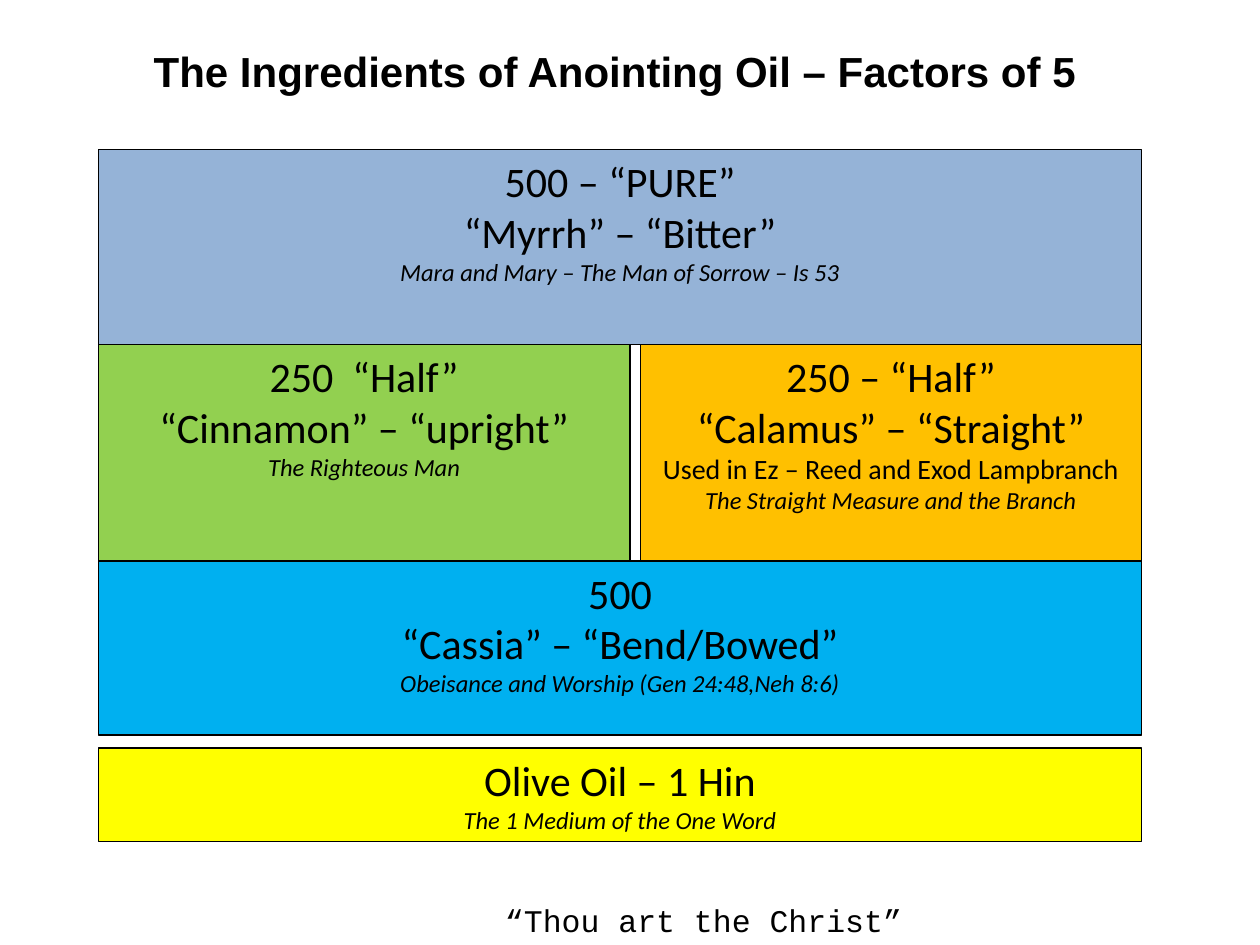
from dataclasses import dataclass

from pptx import Presentation
from pptx.dml.color import RGBColor
from pptx.enum.shapes import MSO_SHAPE
from pptx.enum.text import MSO_ANCHOR, PP_ALIGN
from pptx.slide import Slide
from pptx.text.text import TextFrame
from pptx.util import Pt

BLACK = RGBColor(0x00, 0x00, 0x00)
STEEL = RGBColor(0x95, 0xB3, 0xD7)
GREEN = RGBColor(0x92, 0xD0, 0x50)
ORANGE = RGBColor(0xFF, 0xC0, 0x00)
BLUE = RGBColor(0x00, 0xB0, 0xF0)
YELLOW = RGBColor(0xFF, 0xFF, 0x00)

LEFT, FULL_WIDTH = 56.2, 596.2
RIGHT = LEFT + FULL_WIDTH
CALAMUS_LEFT = 365.8


@dataclass(frozen=True)
class Line:
    text: str
    size: float = 24
    font: str = "Calibri"
    bold: bool = False
    italic: bool = False
    align: PP_ALIGN = PP_ALIGN.CENTER


@dataclass(frozen=True)
class Area:
    left: float
    top: float
    width: float
    height: float

    def lengths(self) -> tuple[Pt, Pt, Pt, Pt]:
        return Pt(self.left), Pt(self.top), Pt(self.width), Pt(self.height)


@dataclass(frozen=True)
class Ingredient:
    area: Area
    color: RGBColor
    lines: list[Line]


def meaning(text: str) -> Line:
    return Line(text, size=14, italic=True)


INGREDIENTS = [
    Ingredient(Area(LEFT, 85.5, FULL_WIDTH, 111.4), STEEL, [
        Line("500 – “PURE”"),
        Line("“Myrrh” – “Bitter”"),
        meaning("Mara and Mary – The Man of Sorrow – Is 53"),
    ]),
    Ingredient(Area(LEFT, 196.9, 303.8, 128), GREEN, [
        Line("250  “Half”"),
        Line("“Cinnamon” – “upright”"),
        meaning("The Righteous Man"),
    ]),
    Ingredient(Area(CALAMUS_LEFT, 196.9, RIGHT - CALAMUS_LEFT, 123.7), ORANGE, [
        Line("250 – “Half”"),
        Line("“Calamus” – “Straight”"),
        Line("Used in Ez – Reed and Exod Lampbranch", size=16),
        meaning("The Straight Measure and the Branch"),
    ]),
    Ingredient(Area(LEFT, 320.6, FULL_WIDTH, 99.4), BLUE, [
        Line("500"),
        Line("“Cassia” – “Bend/Bowed”"),
        meaning("Obeisance and Worship (Gen 24:48,Neh 8:6)"),
    ]),
    Ingredient(Area(LEFT, 427.5, FULL_WIDTH, 53.3), YELLOW, [
        Line("Olive Oil – 1 Hin"),
        meaning("The 1 Medium of the One Word"),
    ]),
]


def write_lines(frame: TextFrame, lines: list[Line], wrap: bool = True) -> None:
    frame.word_wrap = wrap
    frame.vertical_anchor = MSO_ANCHOR.TOP
    for index, line in enumerate(lines):
        para = frame.add_paragraph() if index else frame.paragraphs[0]
        para.text = line.text
        para.alignment = line.align
        para.font.name = line.font
        para.font.size = Pt(line.size)
        para.font.bold = line.bold
        para.font.italic = line.italic
        para.font.color.rgb = BLACK


def add_text(page: Slide, area: Area, line: Line, wrap: bool = True) -> None:
    box = page.shapes.add_textbox(*area.lengths())
    write_lines(box.text_frame, [line], wrap)


def add_ingredient(page: Slide, ingredient: Ingredient) -> None:
    box = page.shapes.add_shape(MSO_SHAPE.RECTANGLE, *ingredient.area.lengths())
    box.shadow.inherit = False
    box.fill.solid()
    box.fill.fore_color.rgb = ingredient.color
    box.line.color.rgb = BLACK
    box.line.width = Pt(0.75)
    write_lines(box.text_frame, ingredient.lines)


def main() -> None:
    deck = Presentation()
    deck.slide_width, deck.slide_height = Pt(720), Pt(540)
    page = deck.slides.add_slide(deck.slide_layouts[6])
    add_text(page, Area(281.5, 511.2, 360, 28.8),
             Line("“Thou art the Christ”", size=18, font="Courier New", align=PP_ALIGN.LEFT))
    add_text(page, Area(78.5, 22.3, 545.8, 36),
             Line("The Ingredients of Anointing Oil – Factors of 5", font="Arial", bold=True),
             wrap=False)
    for ingredient in INGREDIENTS:
        add_ingredient(page, ingredient)
    deck.save("out.pptx")


if __name__ == "__main__":
    main()
